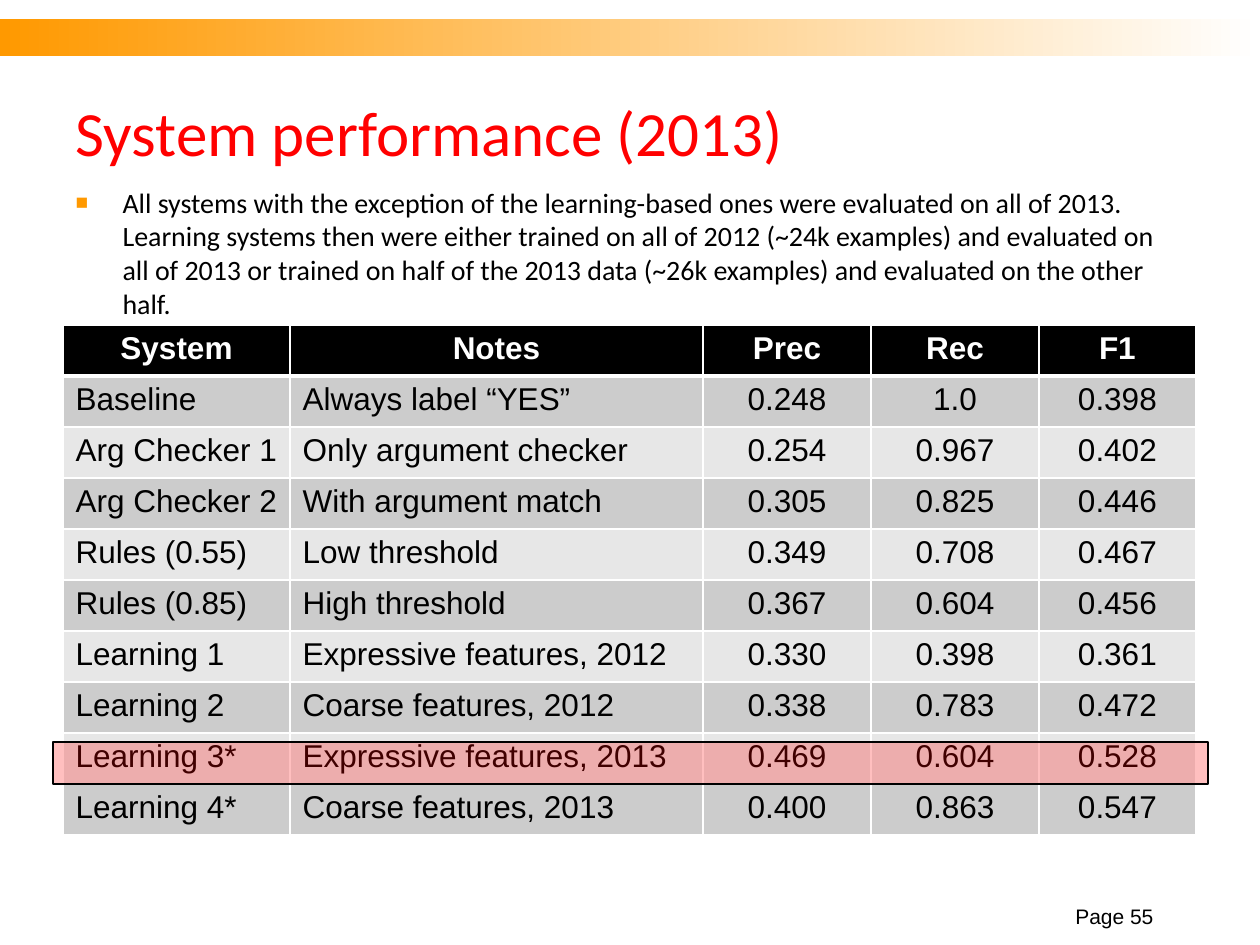
import dataclasses
import typing

import lxml.etree
import pptx
import pptx.dml.color
import pptx.enum.shapes
import pptx.enum.text
import pptx.oxml
import pptx.oxml.ns
import pptx.util

EMU_PER_PX = 914400 / 126
ALIGN = pptx.enum.text.PP_ALIGN
ANCHOR = pptx.enum.text.MSO_ANCHOR
RECTANGLE = pptx.enum.shapes.MSO_SHAPE.RECTANGLE
QN = pptx.oxml.ns.qn


@dataclasses.dataclass(frozen=True)
class Box:
    left: int
    top: int
    width: int
    height: int


class Result(typing.NamedTuple):
    system: str
    notes: str
    precision: str
    recall: str
    f1: str


HEADER = Result("System", "Notes", "Prec", "Rec", "F1")
RESULTS = [
    Result("Baseline", "Always label “YES”", "0.248", "1.0", "0.398"),
    Result("Arg Checker 1", "Only argument checker", "0.254", "0.967", "0.402"),
    Result("Arg Checker 2", "With argument match", "0.305", "0.825", "0.446"),
    Result("Rules (0.55)", "Low threshold", "0.349", "0.708", "0.467"),
    Result("Rules (0.85)", "High threshold", "0.367", "0.604", "0.456"),
    Result("Learning 1", "Expressive features, 2012", "0.330", "0.398", "0.361"),
    Result("Learning 2", "Coarse features, 2012", "0.338", "0.783", "0.472"),
    Result("Learning 3*", "Expressive features, 2013", "0.469", "0.604", "0.528"),
    Result("Learning 4*", "Coarse features, 2013", "0.400", "0.863", "0.547"),
]
COLUMN_WIDTHS = [227, 413, 168, 168, 157]
ROW_HEIGHT = 51
EVALUATION = (
    "All systems with the exception of the learning-based ones were evaluated on all of 2013. "
    "Learning systems then were either trained on all of 2012 (~24k examples) and evaluated on "
    "all of 2013 or trained on half of the 2013 data (~26k examples) and evaluated on the other half."
)


def px(length: int) -> pptx.util.Emu:
    return pptx.util.Emu(round(length * EMU_PER_PX))


def color(value: str) -> pptx.dml.color.RGBColor:
    return pptx.dml.color.RGBColor.from_string(value)


def apply(target: typing.Any, values: dict) -> None:
    for attribute, value in values.items():
        setattr(target, attribute, value)


def extent(box: Box) -> dict:
    return {name: px(length) for name, length in dataclasses.asdict(box).items()}


def write(frame, text: str, face: str, size: int, tint: str, align, bold: bool = False) -> None:
    frame.text = text
    paragraph = frame.paragraphs[0]
    paragraph.alignment = align
    font = paragraph.runs[0].font
    apply(font, {"name": face, "size": pptx.util.Pt(size), "bold": bold})
    font.color.rgb = color(tint)


def add_bullet(paragraph, indent: int, tint: str) -> None:
    properties = paragraph._p.get_or_add_pPr()
    properties.set("marL", str(px(indent)))
    properties.set("indent", str(-px(indent)))
    bullet_color = lxml.etree.SubElement(properties, QN("a:buClr"))
    lxml.etree.SubElement(bullet_color, QN("a:srgbClr"), val=tint)
    lxml.etree.SubElement(properties, QN("a:buSzPct"), val="75000")
    lxml.etree.SubElement(properties, QN("a:buFont"), typeface="Arial")
    lxml.etree.SubElement(properties, QN("a:buChar"), char="■")


def add_borders(cell, bottom_points: int) -> None:
    properties = cell._tc.get_or_add_tcPr()
    widths = {"a:lnL": 1, "a:lnR": 1, "a:lnT": 1, "a:lnB": bottom_points}
    for tag, points in widths.items():
        line = lxml.etree.SubElement(properties, QN(tag), w=str(pptx.util.Pt(points)))
        fill = lxml.etree.SubElement(line, QN("a:solidFill"))
        lxml.etree.SubElement(fill, QN("a:srgbClr"), val="FFFFFF")


def add_rectangle(slide, box: Box):
    rectangle = slide.shapes.add_shape(RECTANGLE, **extent(box))
    rectangle.shadow.inherit = False
    return rectangle


def add_banner(slide, box: Box) -> None:
    banner = add_rectangle(slide, box)
    banner.fill.gradient()
    banner.fill.gradient_angle = 0
    for stop, position, tint in zip(banner.fill.gradient_stops, (0, 1), ("FF9900", "FFFFFF")):
        stop.position = position
        stop.color.rgb = color(tint)
    banner.line.fill.background()


def add_results(slide, left: int, top: int) -> None:
    box = Box(left, top, sum(COLUMN_WIDTHS), ROW_HEIGHT * (len(RESULTS) + 1))
    table = slide.shapes.add_table(len(RESULTS) + 1, len(HEADER), **extent(box)).table
    for column, width in zip(table.columns, COLUMN_WIDTHS):
        column.width = px(width)
    for row_index, result in enumerate([HEADER, *RESULTS]):
        is_header = row_index == 0
        table.rows[row_index].height = px(ROW_HEIGHT)
        band = "000000" if is_header else ("E7E7E7", "CCCCCC")[row_index % 2]
        for column_index, text in enumerate(result):
            cell = table.cell(row_index, column_index)
            align = ALIGN.CENTER if is_header or column_index > 1 else ALIGN.LEFT
            tint = "FFFFFF" if is_header else "000000"
            write(cell.text_frame, text, "Arial", 18, tint, align, is_header)
            add_borders(cell, 3 if is_header else 1)
            cell.fill.solid()
            cell.fill.fore_color.rgb = color(band)


def add_highlight(slide, box: Box) -> None:
    highlight = add_rectangle(slide, box)
    highlight.fill.solid()
    highlight.fill.fore_color.rgb = color("FF0000")
    tint = highlight._element.spPr.find(QN("a:solidFill")).find(QN("a:srgbClr"))
    lxml.etree.SubElement(tint, QN("a:alpha"), val="25000")
    highlight.line.color.rgb = color("000000")
    highlight.line.width = pptx.util.Pt(0.75)


def main() -> None:
    presentation = pptx.Presentation()
    apply(presentation, {"slide_width": px(1260), "slide_height": px(945)})
    slide = presentation.slides.add_slide(presentation.slide_layouts[1])
    frame_format = {"word_wrap": True, "auto_size": pptx.enum.text.MSO_AUTO_SIZE.NONE}

    add_banner(slide, Box(0, 19, 1260, 37))

    title = slide.shapes.title
    apply(title, extent(Box(63, 63, 1134, 136)))
    apply(title.text_frame, {**frame_format, "vertical_anchor": ANCHOR.MIDDLE})
    write(title.text_frame, "System performance (2013)", "Calibri", 36, "FF0000", ALIGN.LEFT)

    evaluation = slide.placeholders[1]
    apply(evaluation, extent(Box(63, 179, 1134, 116)))
    apply(evaluation.text_frame, {**frame_format, "vertical_anchor": ANCHOR.TOP})
    write(evaluation.text_frame, EVALUATION, "Calibri", 16, "000000", ALIGN.LEFT)
    evaluation_paragraph = evaluation.text_frame.paragraphs[0]
    evaluation_paragraph.space_before = pptx.util.Pt(0)
    add_bullet(evaluation_paragraph, 47, "FF9900")

    add_results(slide, 63, 325)
    add_highlight(slide, Box(53, 742, 1155, 42))

    page_number = slide.shapes.add_textbox(**extent(Box(1040, 903, 126, 32)))
    apply(page_number.text_frame, {**frame_format, "vertical_anchor": ANCHOR.BOTTOM})
    write(page_number.text_frame, "Page 55", "Arial", 12, "000000", ALIGN.RIGHT)

    presentation.save("out.pptx")


if __name__ == "__main__":
    main()
